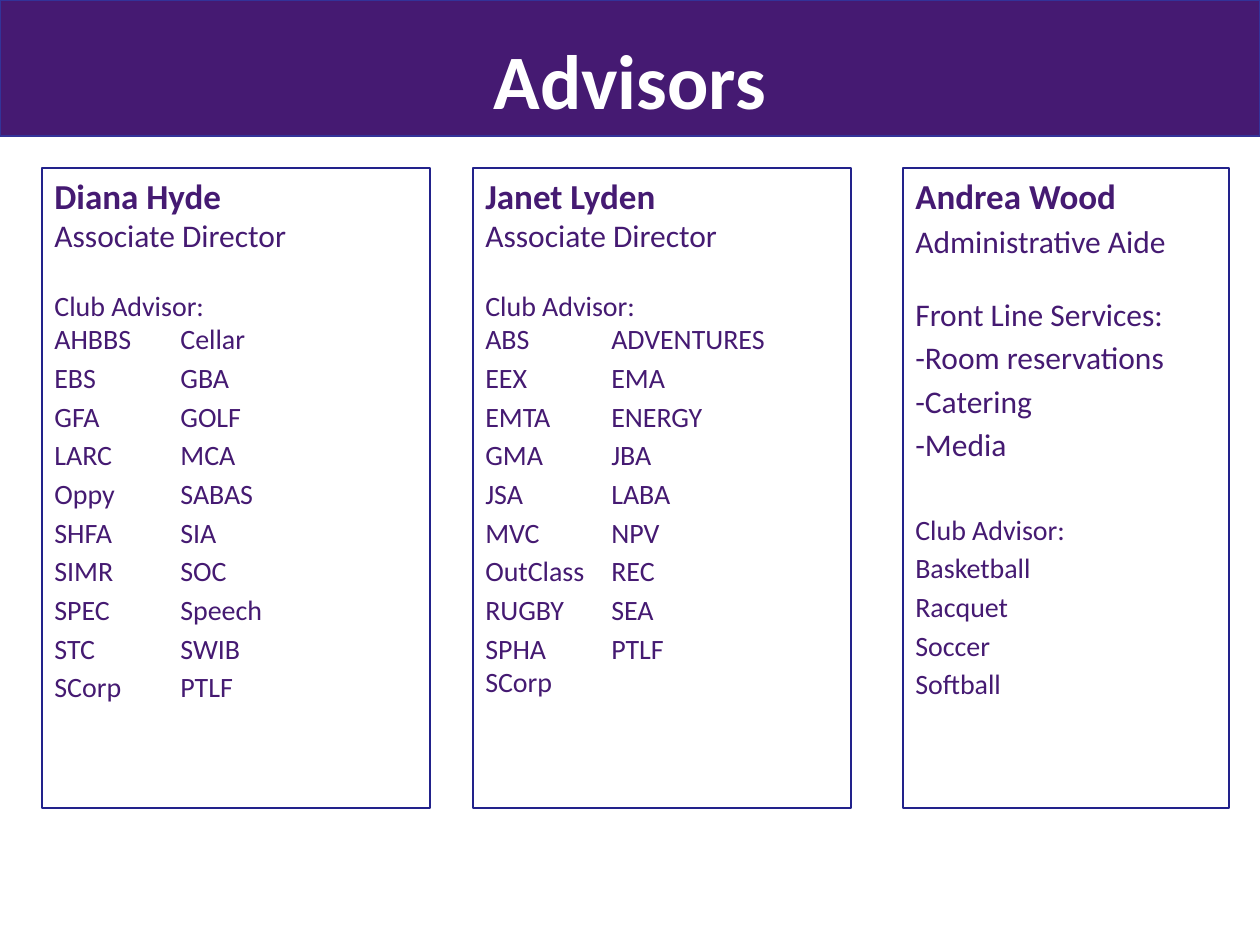
import dataclasses

import lxml.etree
import pptx
import pptx.dml.color
import pptx.enum.shapes
import pptx.enum.text
import pptx.oxml.ns
import pptx.util

EMU_PER_PX = 914400 // 126


def px(length):
    return pptx.util.Emu(length * EMU_PER_PX)


@dataclasses.dataclass(frozen=True)
class Theme:
    font: str = "Calibri"
    purple: str = "451A72"
    banner_edge: str = "333399"
    panel_edge: str = "22228B"
    white: str = "FFFFFF"
    title: int = 44
    name: int = 20
    role: int = 18
    club: int = 16
    gap_ratio: float = 0.18
    tab: int = 126


class AdvisorSlide:
    def __init__(self, slide, theme):
        self.slide = slide
        self.theme = theme

    def color(self, value):
        return pptx.dml.color.RGBColor.from_string(value)

    def style(self, paragraph, size, color, bold=False):
        for run in paragraph.runs:
            run.font.name = self.theme.font
            run.font.size = pptx.util.Pt(size)
            run.font.bold = bold
            run.font.color.rgb = self.color(color)

    def box(self, left, top, width, height, edge, fill=None):
        rectangle = self.slide.shapes.add_shape(
            pptx.enum.shapes.MSO_SHAPE.RECTANGLE,
            px(left), px(top), px(width), px(height))
        rectangle.shadow.inherit = False
        if fill:
            rectangle.fill.solid()
            rectangle.fill.fore_color.rgb = self.color(fill)
        else:
            rectangle.fill.background()
        rectangle.line.color.rgb = self.color(edge)
        rectangle.line.width = pptx.util.Pt(0.75)
        return rectangle

    def title(self, text, left, top, width, height):
        heading = self.slide.shapes.add_textbox(
            px(left), px(top), px(width), px(height)).text_frame
        heading.word_wrap = True
        heading.vertical_anchor = pptx.enum.text.MSO_ANCHOR.MIDDLE
        heading.text = text
        heading.paragraphs[0].alignment = pptx.enum.text.PP_ALIGN.CENTER
        self.style(heading.paragraphs[0], self.theme.title, self.theme.white, True)

    def add_tab(self, paragraph):
        tabs = lxml.etree.SubElement(
            paragraph._p.get_or_add_pPr(), pptx.oxml.ns.qn("a:tabLst"))
        lxml.etree.SubElement(tabs, pptx.oxml.ns.qn("a:tab"),
                              pos=str(px(self.theme.tab)), algn="l")

    def panel(self, left, width, lines):
        frame = self.box(left, 168, width, 640, self.theme.panel_edge).text_frame
        frame.word_wrap = True
        frame.vertical_anchor = pptx.enum.text.MSO_ANCHOR.TOP
        frame.text = "\n".join(text for text, size, gap in lines)
        for paragraph, (text, size, gap) in zip(frame.paragraphs, lines):
            paragraph.alignment = pptx.enum.text.PP_ALIGN.LEFT
            if gap is None:
                gap = size * self.theme.gap_ratio
            paragraph.space_before = pptx.util.Pt(gap)
            if "\t" in text:
                self.add_tab(paragraph)
            self.style(paragraph, size, self.theme.purple, size == self.theme.name)


def director_lines(theme, name, club_rows):
    first, *others = ["\t".join(row) for row in club_rows]
    return [
        (name, theme.name, 0),
        ("Associate Director", theme.role, 0),
        ("Club Advisor:", theme.club, 19.6),
        (first, theme.club, 0),
        *((row, theme.club, None) for row in others),
    ]


def main():
    theme = Theme()
    deck = pptx.Presentation()
    deck.slide_width, deck.slide_height = px(1260), px(945)
    advisors = AdvisorSlide(deck.slides.add_slide(deck.slide_layouts[6]), theme)

    advisors.box(0, 0, 1260, 136, theme.banner_edge, theme.purple)
    advisors.title("Advisors", 210, 21, 840, 116)

    hyde_clubs = [
        ("AHBBS", "Cellar"), ("EBS", "GBA"), ("GFA", "GOLF"), ("LARC", "MCA"),
        ("Oppy", "SABAS"), ("SHFA", "SIA"), ("SIMR", "SOC"),
        ("SPEC", "Speech"), ("STC", "SWIB"), ("SCorp", "PTLF"),
    ]
    lyden_clubs = [
        ("ABS", "ADVENTURES"), ("EEX", "EMA"), ("EMTA", "ENERGY"),
        ("GMA", "JBA"), ("JSA", "LABA"), ("MVC", "NPV"),
        ("OutClass", "REC"), ("RUGBY", "SEA"), ("SPHA", "PTLF"),
    ]
    services = ["-Room reservations", "-Catering", "-Media"]
    sports = ["Basketball", "Racquet", "Soccer", "Softball"]

    advisors.panel(42, 388, director_lines(theme, "Diana Hyde", hyde_clubs))
    advisors.panel(903, 326, [
        ("Andrea Wood", theme.name, 0),
        ("Administrative Aide", theme.role, None),
        ("Front Line Services:", theme.role, 20),
        *((service, theme.role, None) for service in services),
        ("Club Advisor:", theme.club, 28.2),
        *((sport, theme.club, None) for sport in sports),
    ])
    advisors.panel(473, 378, [
        *director_lines(theme, "Janet Lyden", lyden_clubs),
        ("SCorp", theme.club, 0),
    ])

    deck.save("out.pptx")


if __name__ == "__main__":
    main()
